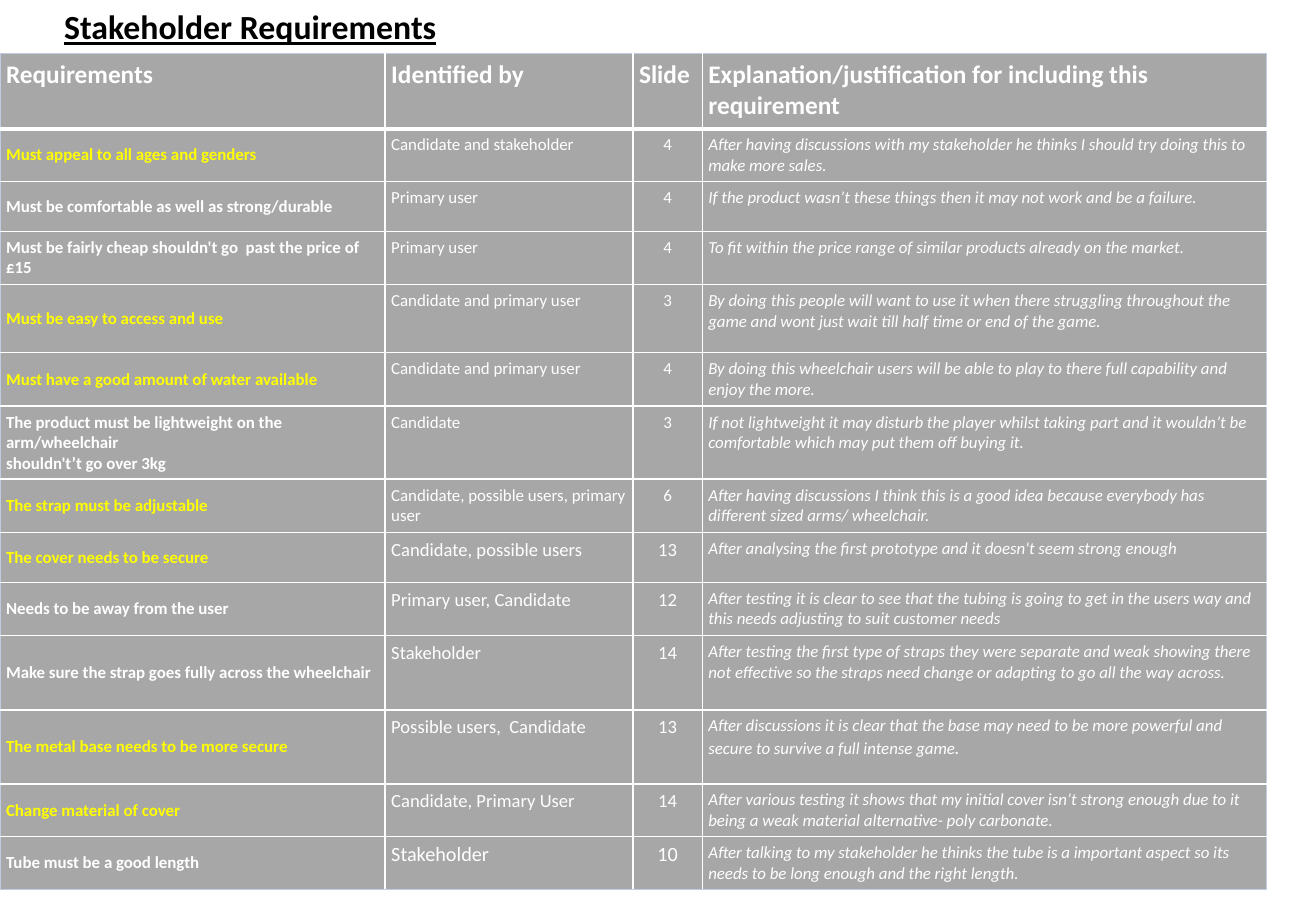
from dataclasses import dataclass

import pptx
import pptx.dml.color
import pptx.enum.text
import pptx.oxml
import pptx.oxml.ns
import pptx.util
from pptx.util import Inches


@dataclass(frozen=True)
class Theme:
    font: str = "Calibri"
    black: str = "000000"
    white: str = "FFFFFF"
    grey: str = "A7A7A7"
    yellow: str = "FFFF00"
    frame: str = "C0CCE1"
    title_pt: int = 20
    header_pt: int = 15
    body_pt: int = 10
    large_pt: int = 11
    largest_pt: int = 12
    frame_pt: float = 0.75
    grid_pt: float = 1
    header_rule_pt: float = 3


@dataclass(frozen=True)
class Style:
    size: int
    color: str
    bold: bool = False
    italic: bool = False
    underline: bool = False


@dataclass(frozen=True)
class Requirement:
    height: float
    name: str
    source: str
    slide: int
    reason: str
    key: bool = False
    size: int = 10
    reason_end: str = ""


THEME = Theme()
MARGIN = Inches(0.05)
HEADER_HEIGHT = 0.62
COLUMN_WIDTHS = (3.17, 2.04, 0.57, 4.64)
HEADERS = ("Requirements", "Identified by", "Slide",
           "Explanation/justification for including this requirement")
LARGE, LARGEST = THEME.large_pt, THEME.largest_pt
REQUIREMENTS = (
    Requirement(0.43, "Must appeal to all ages and genders", "Candidate and stakeholder", 4,
                "After having discussions with my stakeholder he thinks I should try doing this "
                "to make more sales.", key=True),
    Requirement(0.41, "Must be comfortable as well as strong/durable", "Primary user", 4,
                "If the product wasn’t these things then it may not work and be a failure."),
    Requirement(0.44, "Must be fairly cheap shouldn't go  past the price of £15", "Primary user", 4,
                "To fit within the price range of similar products already on the market."),
    Requirement(0.56, "Must be easy to access and use", "Candidate and primary user", 3,
                "By doing this people will want to use it when there struggling throughout the "
                "game and wont just wait till half time or end of the game.", key=True),
    Requirement(0.44, "Must have a good amount of water available", "Candidate and primary user", 4,
                "By doing this wheelchair users will be able to play to there full capability "
                "and enjoy the more.", key=True),
    Requirement(0.6, "The product must be lightweight on the arm/wheelchair\n"
                "shouldn't’t go over 3kg", "Candidate", 3,
                "If not lightweight it may disturb the player whilst taking part and it "
                "wouldn’t be comfortable which may put them off buying it."),
    Requirement(0.44, "The strap must be adjustable", "Candidate, possible users, primary user", 6,
                "After having discussions I think this is a good idea because everybody has "
                "different sized arms/ wheelchair.", key=True),
    Requirement(0.41, "The cover needs to be secure", "Candidate, possible users", 13,
                "After analysing the first prototype and it doesn't seem strong enough",
                key=True, size=LARGE),
    Requirement(0.44, "Needs to be away from the user", "Primary user, Candidate", 12,
                "After testing it is clear to see that the tubing is going to get in the users "
                "way and this needs adjusting to suit customer needs", size=LARGE),
    Requirement(0.61, "Make sure the strap goes fully across the wheelchair", "Stakeholder", 14,
                "After testing the first type of straps they were separate and weak showing "
                "there not effective so the straps need change or adapting to go all the way "
                "across.", size=LARGE),
    Requirement(0.61, "The metal base needs to be more secure", "Possible users,  Candidate", 13,
                "After discussions it is clear that the base may need to be more powerful and "
                "secure to survive a full intense game", key=True, size=LARGE, reason_end="."),
    Requirement(0.43, "Change material of cover", "Candidate, Primary User", 14,
                "After various testing it shows that my initial cover isn’t strong enough due "
                "to it being a weak material alternative- poly carbonate.", key=True, size=LARGE),
    Requirement(0.43, "Tube must be a good length", "Stakeholder", 10,
                "After talking to my stakeholder he thinks the tube is a important aspect so "
                "its needs to be long enough and the right length.", size=LARGEST),
)


def write(tf: pptx.text.text.TextFrame, text: str, style: Style, centred: bool = False) -> None:
    tf.text = text
    for p in tf.paragraphs:
        if centred:
            p.alignment = pptx.enum.text.PP_ALIGN.CENTER
        p.font.name = THEME.font
        p.font.size = pptx.util.Pt(style.size)
        p.font.bold = style.bold
        p.font.italic = style.italic
        p.font.underline = style.underline
        p.font.color.rgb = pptx.dml.color.RGBColor.from_string(style.color)


def add_border(cell: pptx.table._Cell, side: str, color: str, width: float) -> None:
    cell._tc.get_or_add_tcPr().append(pptx.oxml.parse_xml(
        f'<a:ln{side} {pptx.oxml.ns.nsdecls("a")} w="{pptx.util.Pt(width)}">'
        f'<a:solidFill><a:srgbClr val="{color}"/></a:solidFill></a:ln{side}>'))


def format_cell(cell: pptx.table._Cell, row: int, column: int) -> None:
    last_row, last_column = len(REQUIREMENTS), len(HEADERS) - 1
    outer = {"L": column == 0, "R": column == last_column, "T": row == 0, "B": row == last_row}
    header_rule = {"T": row == 1, "B": row == 0}
    for side, on_frame in outer.items():
        if on_frame:
            add_border(cell, side, THEME.frame, THEME.frame_pt)
        else:
            width = THEME.header_rule_pt if header_rule.get(side) else THEME.grid_pt
            add_border(cell, side, THEME.white, width)
    cell.fill.solid()
    cell.fill.fore_color.rgb = pptx.dml.color.RGBColor.from_string(THEME.grey)
    cell.margin_left = cell.margin_right = cell.margin_top = cell.margin_bottom = MARGIN


def add_title(s: pptx.slide.Slide) -> None:
    tf = s.shapes.add_textbox(Inches(0.28), 0, Inches(3.56), Inches(0.42)).text_frame
    tf.margin_left = tf.margin_right = tf.margin_top = tf.margin_bottom = MARGIN
    tf.word_wrap = False
    tf.auto_size = pptx.enum.text.MSO_AUTO_SIZE.SHAPE_TO_FIT_TEXT
    write(tf, "Stakeholder Requirements",
          Style(THEME.title_pt, THEME.black, bold=True, underline=True), centred=True)


def fill_requirement(cells: list[pptx.table._Cell], item: Requirement) -> None:
    name, source, slide, reason = cells
    name.vertical_anchor = pptx.enum.text.MSO_ANCHOR.MIDDLE
    name_color = THEME.yellow if item.key else THEME.white
    write(name.text_frame, item.name, Style(THEME.body_pt, name_color, bold=True))
    detail = Style(item.size, THEME.white)
    write(source.text_frame, item.source, detail)
    write(slide.text_frame, str(item.slide), detail, centred=True)
    write(reason.text_frame, item.reason, Style(THEME.body_pt, THEME.white, italic=True))
    if item.reason_end:
        r = reason.text_frame.paragraphs[0].add_run()
        r.text = item.reason_end
        r.font.size = pptx.util.Pt(THEME.large_pt)


def add_requirements(s: pptx.slide.Slide) -> None:
    heights = [HEADER_HEIGHT] + [item.height for item in REQUIREMENTS]
    table = s.shapes.add_table(len(heights), len(HEADERS), 0, Inches(0.44),
                               Inches(sum(COLUMN_WIDTHS)), Inches(sum(heights))).table
    table.horz_banding = False
    for column, width in zip(table.columns, COLUMN_WIDTHS):
        column.width = Inches(width)
    for i, height in enumerate(heights):
        table.rows[i].height = Inches(height)
        cells = list(table.rows[i].cells)
        for j, cell in enumerate(cells):
            format_cell(cell, i, j)
        if i > 0:
            fill_requirement(cells, REQUIREMENTS[i - 1])
    for cell, header in zip(table.rows[0].cells, HEADERS):
        write(cell.text_frame, header, Style(THEME.header_pt, THEME.white, bold=True))


def main() -> None:
    prs = pptx.Presentation()
    prs.slide_width, prs.slide_height = Inches(10.83), Inches(7.5)
    s = prs.slides.add_slide(prs.slide_layouts[6])
    add_title(s)
    add_requirements(s)
    prs.save("out.pptx")


if __name__ == "__main__":
    main()
